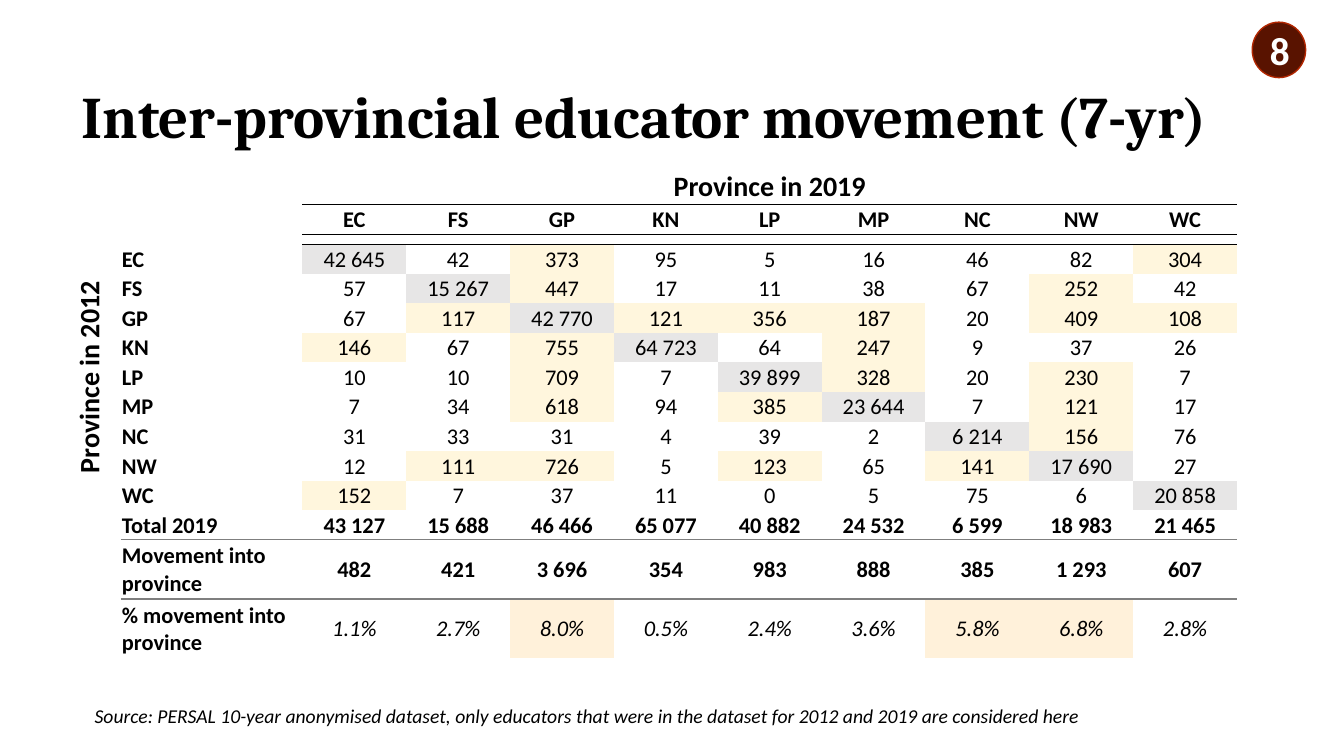
"""Build the slide on educator movement between provinces."""
import pptx
import pptx.util
import pptx.dml.color
import pptx.enum.shapes
import pptx.enum.text
import pptx.oxml
import pptx.oxml.ns
import lxml.etree

RGB = pptx.dml.color.RGBColor
BLACK, WHITE = RGB(0, 0, 0), RGB(255, 255, 255)
GREY, CREAM, PEACH = RGB(0xE7, 0xE6, 0xE6), RGB(0xFF, 0xF6, 0xDD), RGB(0xFF, 0xF1, 0xDA)
MAROON, RUST, RULE = RGB(0x59, 0x13, 0), RGB(0xB2, 0x26, 0), RGB(0x7F, 0x7F, 0x7F)
ALIGN, ANCHOR = pptx.enum.text.PP_ALIGN, pptx.enum.text.MSO_ANCHOR
INCH = pptx.util.Inches

TITLE = [("Inter-provincial educator movement ", 42), ("(", 40), ("7-yr", 42), (")", 40)]
SOURCE = ("Source: PERSAL 10-year anonymised dataset, only educators that were "
          "in the dataset for 2012 and 2019 are considered here")
PAGE = "8"
ACROSS, DOWN = "Province in 2019", "Province in 2012"
NAMES = ["EC", "FS", "GP", "KN", "LP", "MP", "NC", "NW", "WC"]
MOVES = [
    [42645, 42, 373, 95, 5, 16, 46, 82, 304],
    [57, 15267, 447, 17, 11, 38, 67, 252, 42],
    [67, 117, 42770, 121, 356, 187, 20, 409, 108],
    [146, 67, 755, 64723, 64, 247, 9, 37, 26],
    [10, 10, 709, 7, 39899, 328, 20, 230, 7],
    [7, 34, 618, 94, 385, 23644, 7, 121, 17],
    [31, 33, 31, 4, 39, 2, 6214, 156, 76],
    [12, 111, 726, 5, 123, 65, 141, 17690, 27],
    [152, 7, 37, 11, 0, 5, 75, 6, 20858],
]
TOTALS = [43127, 15688, 46466, 65077, 40882, 24532, 6599, 18983, 21465]
INTO = [482, 421, 3696, 354, 983, 888, 385, 1293, 607]
SHARES = [1.1, 2.7, 8.0, 0.5, 2.4, 3.6, 5.8, 6.8, 2.8]
FOOT = ["Total 2019", "Movement into province", "% movement into province"]
HIGH_MOVE, HIGH_SHARE = 100, 5

LEFT, TOP, WIDE, TALL = 0.71, 1.66, 11.56, 4.87
HEAD, GAP = 0.37, 0.1
UNIT = (TALL - HEAD - GAP) / 15
COLS = [0.49, 1.8] + [1.03] * 9
ROWS = [HEAD, UNIT, GAP] + [UNIT] * 10 + [UNIT * 2] * 2


def write(frame, text, size=16, bold=False, italic=False, color=BLACK,
          font="Calibri", align=ALIGN.CENTER, space=None):
    """Fill the first paragraph; text is a string or (string, size) pairs."""
    frame.word_wrap = True
    line = frame.paragraphs[0]
    line.alignment = align
    if space:
        line.line_spacing = space
    for words, points in ([(text, size)] if isinstance(text, str) else text):
        run = line.add_run()
        run.text = words
        run.font.size = pptx.util.Pt(points)
        run.font.name = font
        run.font.bold, run.font.italic = bold, italic
        run.font.color.rgb = color


def put(grid, row, col, text, fill=None, **look):
    """Write one table cell."""
    cell = grid.cell(row, col)
    write(cell.text_frame, text, **look)
    if fill is not None:
        cell.fill.solid()
        cell.fill.fore_color.rgb = fill


def edge(cell, side, color, points):
    """Draw one border of a cell."""
    name = pptx.oxml.ns.qn
    line = lxml.etree.Element(name("a:ln" + side), w=str(pptx.util.Pt(points)))
    solid = lxml.etree.SubElement(line, name("a:solidFill"))
    lxml.etree.SubElement(solid, name("a:srgbClr"), val=str(color))
    cell._tc.get_or_add_tcPr().insert(0, line)


def rule(grid, row, start, color, points):
    """Draw a line below a table row."""
    for col in range(start, len(COLS)):
        edge(grid.cell(row, col), "B", color, points)
        edge(grid.cell(row + 1, col), "T", color, points)


def count(number):
    """Group thousands with a space."""
    return f"{number:,}".replace(",", " ")


def make(slide):
    """Add the movement table."""
    grid = slide.shapes.add_table(len(ROWS), len(COLS), INCH(LEFT), INCH(TOP),
                                  INCH(WIDE), INCH(TALL)).table
    name = pptx.oxml.ns.qn
    style = grid._tbl.tblPr.find(name("a:tableStyleId"))
    style.text = "{2D5ABB26-0587-4C30-8999-92F81FD0307C}"
    grid.first_row = grid.horz_banding = False
    for part, size in zip(grid.columns, COLS):
        part.width = INCH(size)
    for part, size in zip(grid.rows, ROWS):
        part.height = INCH(size)
    for cell in grid.iter_cells():
        cell.margin_left = cell.margin_right = cell.margin_top = INCH(0.01)
        cell.margin_bottom = 0
        cell.vertical_anchor = ANCHOR.MIDDLE
        cell.fill.background()
    grid.cell(0, 2).merge(grid.cell(0, 10))
    grid.cell(3, 0).merge(grid.cell(11, 0))
    put(grid, 0, 2, ACROSS, size=20, bold=True)
    grid.cell(0, 2).vertical_anchor = ANCHOR.BOTTOM
    put(grid, 3, 0, DOWN, size=20, bold=True)
    grid.cell(3, 0)._tc.get_or_add_tcPr().set("vert", "vert270")
    for row, label in enumerate(NAMES + FOOT, 3):
        put(grid, row, 1, label, bold=True, align=ALIGN.LEFT)
    for i, label in enumerate(NAMES):
        col = i + 2
        put(grid, 1, col, label, bold=True)
        for j, line in enumerate(MOVES):
            fill = GREY if i == j else CREAM if line[i] > HIGH_MOVE else None
            put(grid, j + 3, col, count(line[i]), fill)
        put(grid, 12, col, count(TOTALS[i]), bold=True)
        put(grid, 13, col, count(INTO[i]), bold=True)
        put(grid, 14, col, f"{SHARES[i]:.1f}%",
            PEACH if SHARES[i] > HIGH_SHARE else None, italic=True)
    for cell in grid.iter_cells():
        if not cell.text_frame.text:
            line = cell.text_frame.paragraphs[0]._p
            lxml.etree.SubElement(line, name("a:endParaRPr"), sz="400")
    rule(grid, 0, 2, BLACK, 0.75)
    rule(grid, 1, 2, BLACK, 0.75)
    rule(grid, 12, 1, RULE, 1)


def main():
    """Build and save the deck."""
    deck = pptx.Presentation()
    deck.slide_width, deck.slide_height = INCH(13.33), INCH(7.5)
    slide = deck.slides.add_slide(deck.slide_layouts[6])
    title = slide.shapes.add_textbox(INCH(LEFT), INCH(0.46), INCH(11.76), INCH(1.45))
    title.fill.solid()
    title.fill.fore_color.rgb = WHITE
    write(title.text_frame, TITLE, bold=True, font="Cambria", align=ALIGN.LEFT, space=0.9)
    note = slide.shapes.add_textbox(INCH(0.84), INCH(6.92), INCH(10.13), INCH(0.35))
    write(note.text_frame, SOURCE, size=14, italic=True, align=ALIGN.LEFT)
    make(slide)
    badge = slide.shapes.add_shape(pptx.enum.shapes.MSO_SHAPE.OVAL, INCH(12.42),
                                   INCH(0.22), INCH(0.53), INCH(0.55))
    badge.shadow.inherit = False
    badge.fill.solid()
    badge.fill.fore_color.rgb = MAROON
    badge.line.color.rgb = RUST
    badge.line.width = pptx.util.Pt(1)
    write(badge.text_frame, PAGE, size=28, bold=True, color=WHITE)
    for shape in (title, note, badge):
        shape.text_frame.vertical_anchor = ANCHOR.MIDDLE
    deck.save("out.pptx")


if __name__ == "__main__":
    main()
